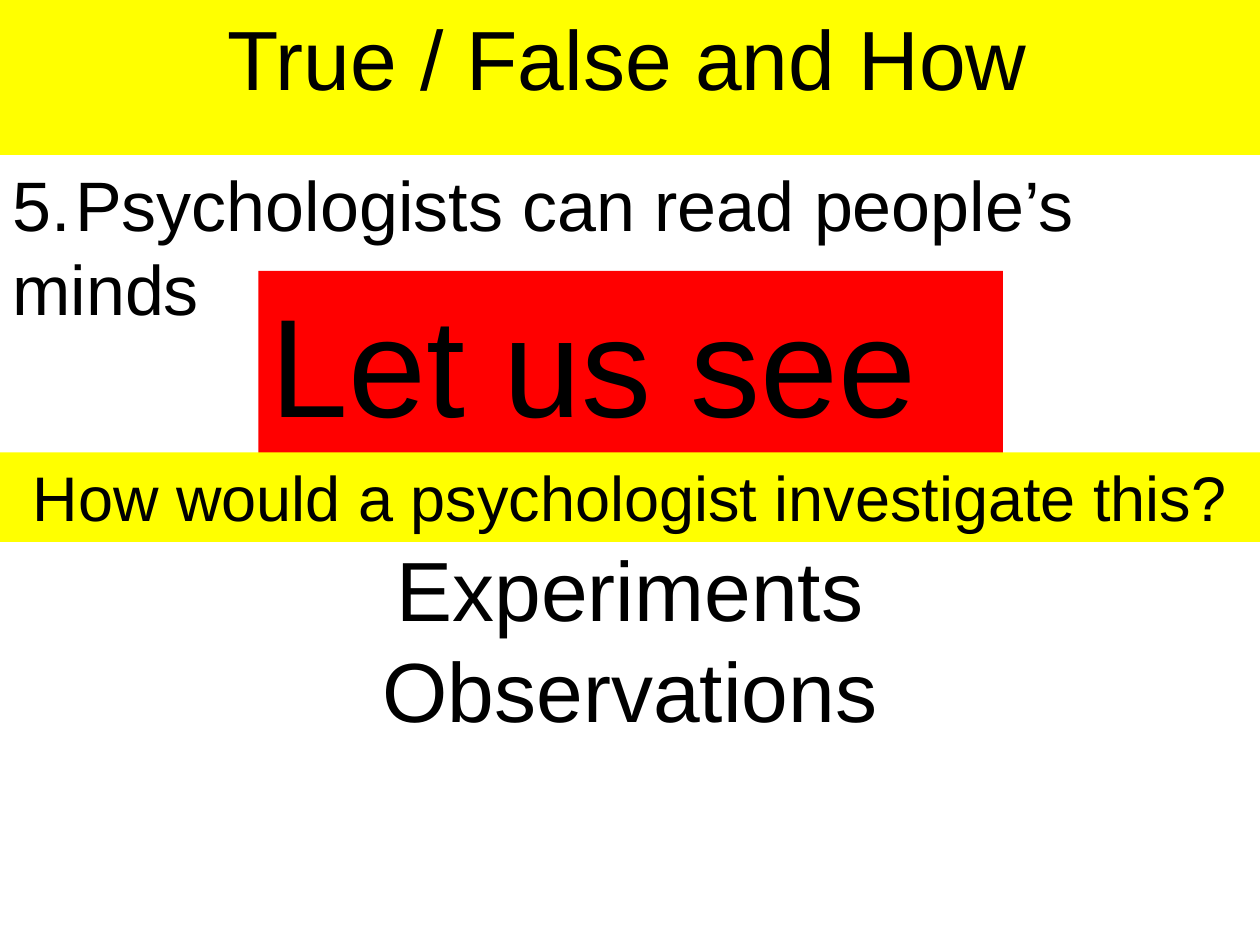
from pptx import Presentation
from pptx.dml.color import RGBColor
from pptx.enum.text import MSO_ANCHOR as Anchor, MSO_AUTO_SIZE as AutoSize, PP_ALIGN as Align
from pptx.util import Inches, Pt

YELLOW = RGBColor(0xFF, 0xFF, 0x00)
RED = RGBColor(0xFF, 0x00, 0x00)
BLACK = RGBColor(0x00, 0x00, 0x00)

deck = Presentation()
deck.slide_width, deck.slide_height = Inches(10), Inches(7.5)
slide = deck.slides.add_slide(deck.slide_layouts[5])


def add_block(block, bounds, lines, size, align, fill=None):
    places = zip(("left", "top", "width", "height"), bounds)
    for name, value in places:
        setattr(block, name, Inches(value))
    if fill is not None:
        block.fill.solid()
        block.fill.fore_color.rgb = fill
    frame = block.text_frame
    frame_format = {
        "text": "\n".join(lines),
        "word_wrap": True,
        "auto_size": AutoSize.NONE,
        "vertical_anchor": Anchor.TOP,
    }
    for name, value in frame_format.items():
        setattr(frame, name, value)
    font_format = {"name": "Arial", "size": Pt(size)}
    for paragraph in frame.paragraphs:
        paragraph.alignment = align
        for run in paragraph.runs:
            run.font.color.rgb = BLACK
            for name, value in font_format.items():
                setattr(run.font, name, value)


add_block(slide.shapes.title, (-0.04, 0, 10.04, 1.23),
          ["True / False and How"], 48, Align.CENTER, YELLOW)

blocks = [
    ((0, 1.23, 10, 1.45), ["5.\tPsychologists can read people’s minds"], 40, Align.LEFT, None),
    ((2.05, 2.15, 5.91, 1.45), ["Let us see"], 80, Align.LEFT, RED),
    ((0, 3.59, 10, 0.71), ["How would a psychologist investigate this?"], 36, Align.CENTER, YELLOW),
    ((0, 4.22, 10, 7.5), ["Experiments", "Observations"], 48, Align.CENTER, None),
]
for bounds, lines, size, align, fill in blocks:
    textbox = slide.shapes.add_textbox(*map(Inches, bounds))
    add_block(textbox, bounds, lines, size, align, fill)

deck.save("out.pptx")
